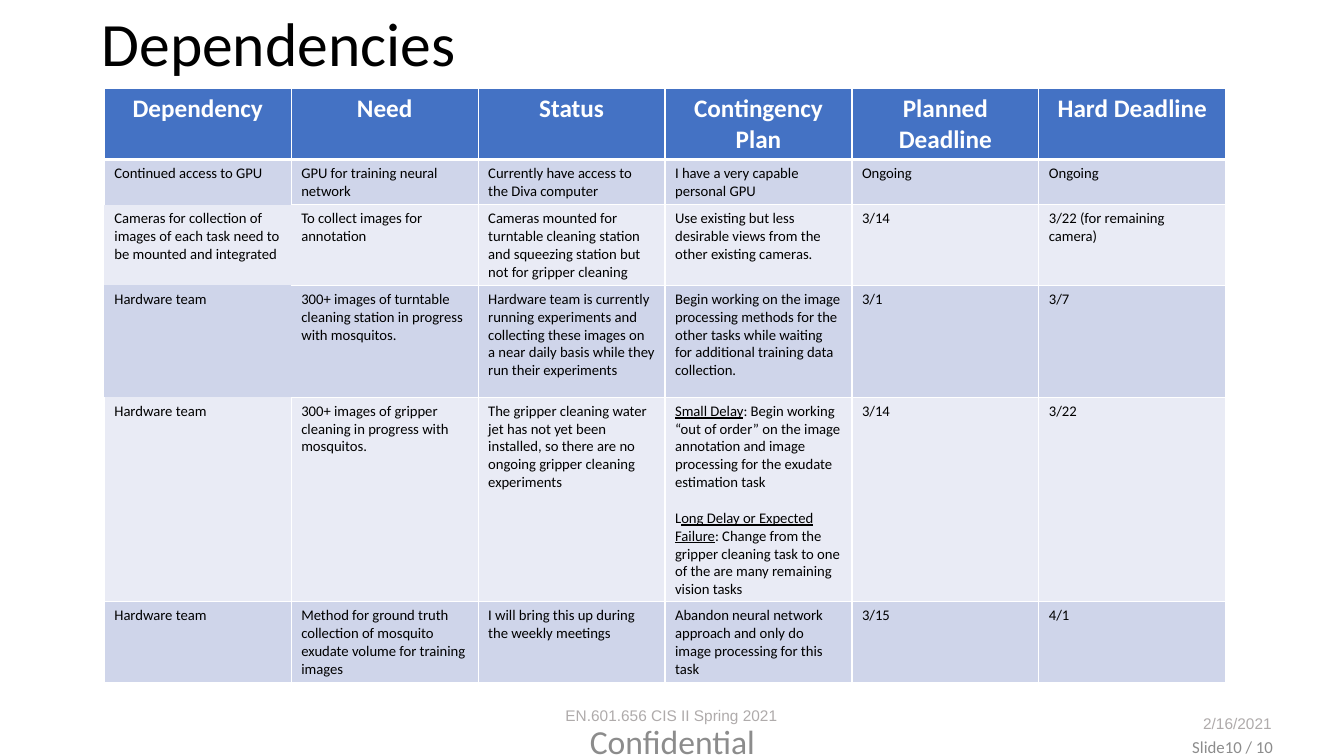
from dataclasses import dataclass

import lxml.etree
import pptx
import pptx.dml.color
import pptx.enum.text
import pptx.oxml.ns
import pptx.util

Cm = pptx.util.Cm
Pt = pptx.util.Pt
Color = pptx.dml.color.RGBColor
Align = pptx.enum.text.PP_ALIGN
Anchor = pptx.enum.text.MSO_ANCHOR
qn = pptx.oxml.ns.qn


@dataclass(frozen=True)
class Theme:
    font: str = "Calibri"
    footer_font: str = "Arial"
    black: str = "000000"
    white: str = "FFFFFF"
    header_fill: str = "4472C4"
    band_fills: tuple[str, str] = ("CFD5EA", "E9EBF5")
    footer_gray: str = "AFABAB"
    gray: str = "8C8C8C"
    title_size: float = 44
    confidential_size: float = 24
    header_size: float = 18
    number_size: float = 12
    footer_size: float = 11
    body_size: float = 10.5
    paragraph_gap: float = 12.8
    border: float = 1
    header_border: float = 3


THEME = Theme()


@dataclass(frozen=True)
class Label:
    text: str
    left: float
    top: float
    width: float
    height: float
    size: float
    color: str
    font: str = THEME.font
    align: Align = Align.LEFT
    anchor: Anchor = Anchor.MIDDLE
    wrap: bool = True
    line_spacing: float = 1.0


@dataclass(frozen=True)
class Segment:
    text: str
    underline: bool = False


@dataclass(frozen=True)
class Dependency:
    dependency: str
    need: str
    status: str
    contingency: str | list[list[Segment]]
    planned: str
    hard: str

    def cells(self) -> list[str | list[list[Segment]]]:
        return [self.dependency, self.need, self.status,
                self.contingency, self.planned, self.hard]


LABELS = [
    Label("Dependencies", 2.31, -0.66, 29.21, 3.68, THEME.title_size, THEME.black,
          line_spacing=0.9),
    Label("EN.601.656 CIS II Spring 2021", 14, 17.68, 5.89, 0.74, THEME.footer_size,
          THEME.footer_gray, THEME.footer_font, anchor=Anchor.TOP, wrap=False),
    Label("2/16/2021", 30.07, 17.88, 2.26, 0.74, THEME.footer_size,
          THEME.footer_gray, THEME.footer_font, anchor=Anchor.TOP, wrap=False),
    Label("Confidential", 11.23, 18.16, 11.43, 1.02, THEME.confidential_size,
          THEME.gray, align=Align.CENTER),
    Label("Slide10 / 10", 29.18, 18.31, 3.15, 1.02, THEME.number_size,
          THEME.gray, align=Align.RIGHT),
]

HEADERS = ["Dependency", "Need", "Status", "Contingency Plan", "Planned Deadline",
           "Hard Deadline"]
DEPENDENCIES = [
    Dependency("Continued access to GPU", "GPU for training neural network",
               "Currently have access to the Diva computer",
               "I have a very capable personal GPU", "Ongoing", "Ongoing"),
    Dependency("Cameras for collection of images of each task need to be mounted and integrated",
               "To collect images for annotation",
               "Cameras mounted for turntable cleaning station and squeezing station "
               "but not for gripper cleaning",
               "Use existing but less desirable views from the other existing cameras.",
               "3/14", "3/22 (for remaining camera)"),
    Dependency("Hardware team",
               "300+ images of turntable cleaning station in progress with mosquitos.",
               "Hardware team is currently running experiments and collecting these images "
               "on a near daily basis while they run their experiments",
               "Begin working on the image processing methods for the other tasks while "
               "waiting for additional training data collection.", "3/1", "3/7"),
    Dependency("Hardware team", "300+ images of gripper cleaning in progress with mosquitos.",
               "The gripper cleaning water jet has not yet been installed, so there are no "
               "ongoing gripper cleaning experiments",
               [[Segment("Small Delay", True),
                 Segment(": Begin working “out of order” on the image annotation and image "
                         "processing for the exudate estimation task")],
                [Segment("L"), Segment("ong Delay or Expected Failure", True),
                 Segment(": Change from the gripper cleaning task to one of the are many "
                         "remaining vision tasks")]], "3/14", "3/22"),
    Dependency("Hardware team",
               "Method for ground truth collection of mosquito exudate volume for training images",
               "I will bring this up during the weekly meetings",
               "Abandon neural network approach and only do image processing for this task",
               "3/15", "4/1"),
]
COLUMN_WIDTH = 4.71
ROW_HEIGHTS = [1.73, 1.09, 1.96, 2.82, 4.98, 1.96]
# Edges around the first cells of the second and third body rows have no line.
OPEN_EDGES = ({(row, 0, side) for row in (2, 3) for side in "LRTB"}
              | {(1, 0, "B"), (4, 0, "T"), (2, 1, "L"), (3, 1, "L")})


def set_font(font: pptx.text.text.Font, name: str, size: float, color: str,
             bold: bool = False) -> None:
    font.name, font.size, font.bold = name, Pt(size), bold
    font.color.rgb = Color.from_string(color)


def add_label(slide: pptx.slide.Slide, label: Label) -> None:
    shape = slide.shapes.add_textbox(Cm(label.left), Cm(label.top),
                                     Cm(label.width), Cm(label.height))
    frame = shape.text_frame
    frame.word_wrap = label.wrap
    frame.vertical_anchor = label.anchor
    paragraph = frame.paragraphs[0]
    paragraph.text = label.text
    paragraph.alignment = label.align
    paragraph.line_spacing = label.line_spacing
    set_font(paragraph.font, label.font, label.size, label.color)


def set_borders(cell: pptx.table._Cell, row: int, column: int) -> None:
    properties = cell._tc.get_or_add_tcPr()
    for side in "LRTB":
        thick = (row, side) in ((0, "B"), (1, "T"))
        width = THEME.header_border if thick else THEME.border
        line = lxml.etree.SubElement(properties, qn(f"a:ln{side}"), w=str(Pt(width)))
        if (row, column, side) in OPEN_EDGES:
            lxml.etree.SubElement(line, qn("a:noFill"))
        else:
            fill = lxml.etree.SubElement(line, qn("a:solidFill"))
            lxml.etree.SubElement(fill, qn("a:srgbClr"), val=THEME.white)


def fill_cell(cell: pptx.table._Cell, content: str | list[list[Segment]], row: int,
              column: int) -> None:
    is_header = row == 0
    set_borders(cell, row, column)
    cell.fill.solid()
    cell.fill.fore_color.rgb = Color.from_string(
        THEME.header_fill if is_header else THEME.band_fills[(row - 1) % 2])
    paragraphs = [[Segment(content)]] if isinstance(content, str) else content
    for index, segments in enumerate(paragraphs):
        frame = cell.text_frame
        paragraph = frame.add_paragraph() if index else frame.paragraphs[0]
        if index:
            paragraph.space_before = Pt(THEME.paragraph_gap)
        paragraph.alignment = Align.CENTER if is_header else Align.LEFT
        for segment in segments:
            run = paragraph.add_run()
            run.text = segment.text
            if segment.underline:
                run.font.underline = True
        set_font(paragraph.font, THEME.font,
                 THEME.header_size if is_header else THEME.body_size,
                 THEME.white if is_header else THEME.black, is_header)


def add_dependency_table(slide: pptx.slide.Slide) -> None:
    rows = [HEADERS] + [dependency.cells() for dependency in DEPENDENCIES]
    table = slide.shapes.add_table(
        len(rows), len(HEADERS), Cm(2.63), Cm(2.24),
        Cm(COLUMN_WIDTH * len(HEADERS)), Cm(sum(ROW_HEIGHTS))).table
    for column in table.columns:
        column.width = Cm(COLUMN_WIDTH)
    for row, contents in enumerate(rows):
        table.rows[row].height = Cm(ROW_HEIGHTS[row])
        for column, content in enumerate(contents):
            fill_cell(table.cell(row, column), content, row, column)


def main() -> None:
    presentation = pptx.Presentation()
    presentation.slide_width, presentation.slide_height = Cm(33.87), Cm(19.05)
    slide = presentation.slides.add_slide(presentation.slide_layouts[6])
    for label in LABELS:
        add_label(slide, label)
    add_dependency_table(slide)
    presentation.save("out.pptx")


if __name__ == "__main__":
    main()
